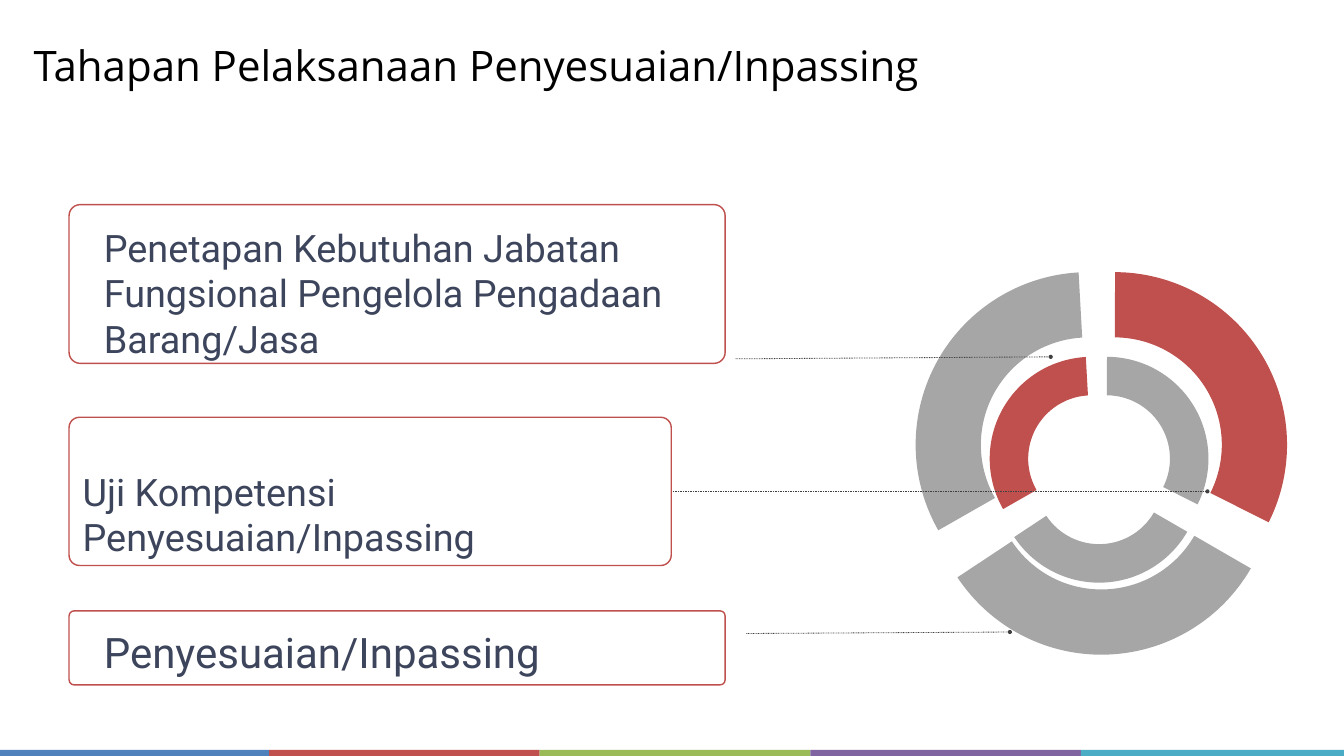
from lxml import etree
from pptx import Presentation
from pptx.dml.color import RGBColor
from pptx.enum.dml import MSO_LINE
from pptx.enum.shapes import MSO_CONNECTOR, MSO_SHAPE
from pptx.enum.text import MSO_ANCHOR
from pptx.oxml.ns import qn
from pptx.util import Inches, Pt

RECT = MSO_SHAPE.RECTANGLE
ROUND_RECT = MSO_SHAPE.ROUNDED_RECTANGLE
BLOCK_ARC = MSO_SHAPE.BLOCK_ARC
STRAIGHT = MSO_CONNECTOR.STRAIGHT
DOTTED = MSO_LINE.ROUND_DOT
MIDDLE = MSO_ANCHOR.MIDDLE
TOP = MSO_ANCHOR.TOP

BLUE = RGBColor(0x4F, 0x81, 0xBD)
RED = RGBColor(0xC0, 0x50, 0x4D)
GREEN = RGBColor(0x9B, 0xBB, 0x59)
PURPLE = RGBColor(0x80, 0x64, 0xA2)
TEAL = RGBColor(0x4B, 0xAC, 0xC6)
GRAY = RGBColor(0xA6, 0xA6, 0xA6)
DARK = RGBColor(0x40, 0x40, 0x40)
NAVY = RGBColor(0x3D, 0x45, 0x5C)
BLACK = RGBColor(0, 0, 0)
WHITE = RGBColor(0xFF, 0xFF, 0xFF)

prs = Presentation()
prs.slide_width = Inches(26.67)
prs.slide_height = Inches(15)
s = prs.slides.add_slide(prs.slide_layouts[6])


def add_shape(kind, x, y, w, h, fill):
    sp = s.shapes.add_shape(kind, Inches(x), Inches(y), Inches(w), Inches(h))
    sp.shadow.inherit = False
    sp.fill.solid()
    sp.fill.fore_color.rgb = fill
    sp.line.fill.background()
    return sp


def add_text(text, x, y, w, h, size, font, color, inset, anchor):
    tf = s.shapes.add_textbox(Inches(x), Inches(y), Inches(w), Inches(h)).text_frame
    tf.word_wrap = True
    tf.vertical_anchor = anchor
    tf.margin_left = Inches(inset)
    tf.margin_right = Inches(0.27)
    tf.margin_top = tf.margin_bottom = Inches(0.13)
    tf.text = text
    r = tf.paragraphs[0].runs[0]
    r.font.size = Pt(size)
    r.font.name = font
    r.font.color.rgb = color


BAR_W = 5.37
for i, color in enumerate([BLUE, RED, GREEN, PURPLE, TEAL]):
    add_shape(RECT, -0.03 + i * BAR_W, 14.88, BAR_W, 0.2, color)

add_text("Tahapan Pelaksanaan Penyesuaian/Inpassing", 0, 0, 26.67, 2.58,
         60, "Open Sans", BLACK, 0.67, MIDDLE)

ANGLES = [305, 64.9, 184.7]
rings = [
    (6.85, [(18.17, 5.4, GRAY), (18.69, 5.4, RED), (18.43, 6.14, GRAY)]),
    (4.04, [(19.64, 7.08, RED), (19.94, 7.08, GRAY), (19.79, 7.52, GRAY)]),
]
for size, arcs in rings:
    for angle, (x, y, color) in zip(ANGLES, arcs):
        sp = add_shape(BLOCK_ARC, x, y, size, size, color)
        sp.rotation = angle
        for i, value in enumerate([123.182, 193.078, 0.189]):
            sp.adjustments[i] = value

leaders = [
    (13.32, 9.75, 23.96, 9.75),
    (14.81, 12.57, 20.04, 12.54),
    (14.6, 7.12, 20.85, 7.08),
]
for points in leaders:
    cx = s.shapes.add_connector(STRAIGHT, *[Inches(v) for v in points])
    cx.line.color.rgb = DARK
    cx.line.width = Pt(1.2)
    cx.line.dash_style = DOTTED
    etree.SubElement(cx.line._get_or_add_ln(), qn("a:tailEnd"), type="oval")
    etree.SubElement(cx._element.spPr, qn("a:effectLst"))

steps = [
    ("Penetapan Kebutuhan Jabatan Fungsional Pengelola Pengadaan Barang/Jasa",
     54, (4.06, 13.02, 3.15), (1.79, 4.33, 12.6, 2.09)),
    ("Uji Kompetensi Penyesuaian/Inpassing",
     54, (8.28, 11.95, 2.94), (1.37, 9.16, 11.95, 1.18)),
    ("Penyesuaian/Inpassing",
     60, (12.12, 13.02, 1.47), (1.79, 12.31, 12.18, 1.28)),
]
for text, size, (y, w, h), text_box in steps:
    sp = add_shape(ROUND_RECT, 1.37, y, w, h, WHITE)
    sp.adjustments[0] = 0.07
    sp.line.color.rgb = RED
    sp.line.width = Pt(2)
    add_text(text, *text_box, size, "Roboto", NAVY, 0.27, TOP)

prs.save("out.pptx")
